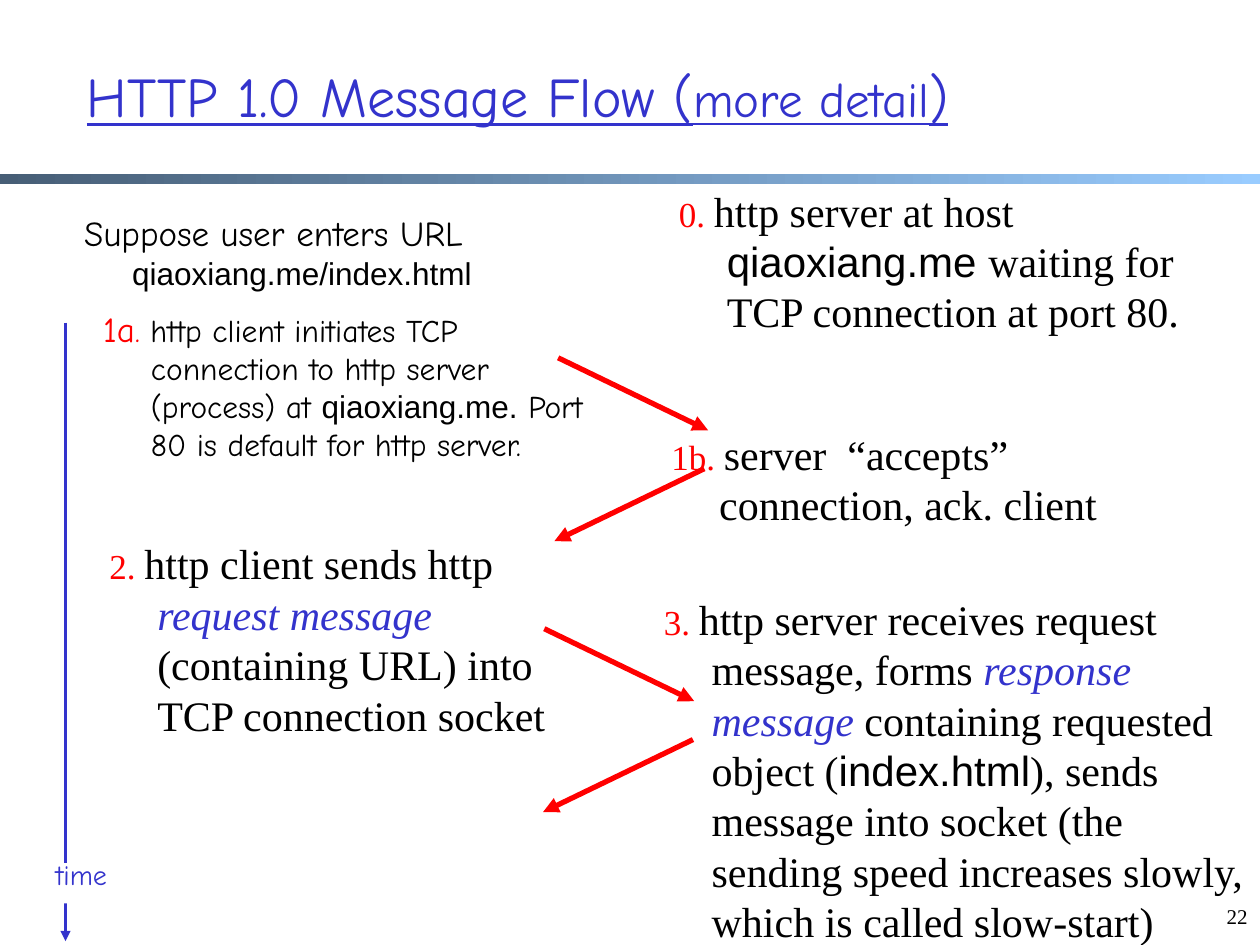
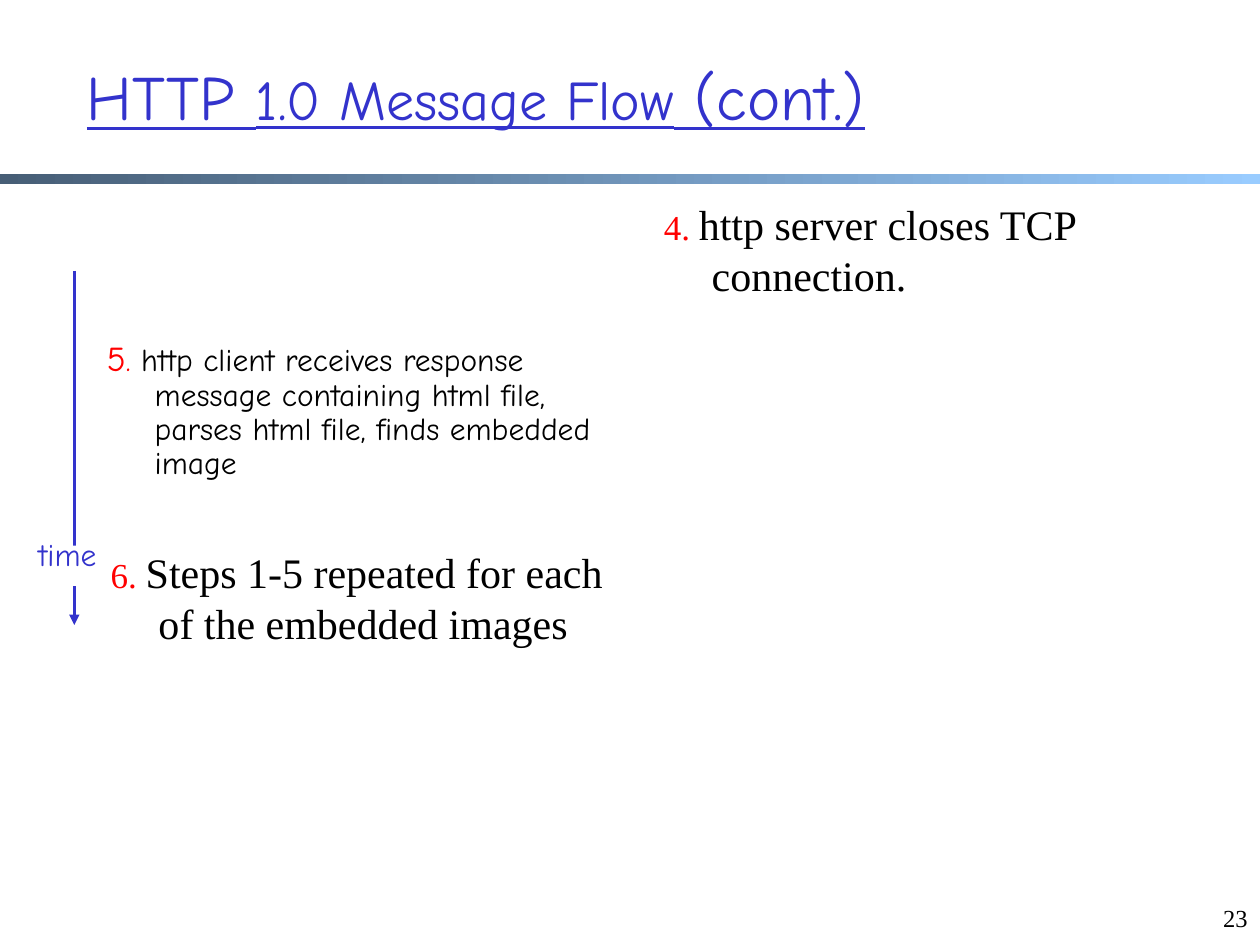
import pptx
import pptx.dml.color
import pptx.enum.dml
import pptx.enum.shapes
import pptx.enum.text
import pptx.oxml
import pptx.oxml.ns
import pptx.util

BLUE, RED, BLACK, WHITE = "3333CC", "FF0000", "000000", "FFFFFF"
BAND_FROM, BAND_TO = "475E76", "99CCFF"
COMIC, SERIF, SANS = "Comic Neue", "Times New Roman", "Arial"
COLS, ROWS = 100, 75
ALIGN = pptx.enum.text.PP_ALIGN
HANG = pptx.util.Inches(0.38)
STEP_WIDTH = 41.7


def rgb(value):
    return pptx.dml.color.RGBColor.from_string(value)


class Deck:
    """Holds the shared style and the current slide, on a grid of 100 columns by 75 rows."""

    def __init__(self):
        self.prs = pptx.Presentation()
        self.prs.slide_width = pptx.util.Inches(10)
        self.prs.slide_height = pptx.util.Inches(7.5)
        self.s = None

    def x(self, cols):
        return round(self.prs.slide_width * cols / COLS)

    def y(self, rows):
        return round(self.prs.slide_height * rows / ROWS)

    def box(self, left, top, width, height):
        return self.x(left), self.y(top), self.x(width), self.y(height)

    def new_slide(self, title, title_width, number, number_size):
        self.s = self.prs.slides.add_slide(self.prs.slide_layouts[5])
        self.band()
        self.text((95, 71.2, 5, 5), [(number, number_size, SERIF, BLACK)], ALIGN.RIGHT)
        sp = self.s.shapes.title
        sp.left, sp.top, sp.width, sp.height = self.box(5.9, 2.8, title_width, 9.5)
        tf = sp.text_frame
        tf.auto_size = pptx.enum.text.MSO_AUTO_SIZE.NONE
        tf.vertical_anchor = pptx.enum.text.MSO_ANCHOR.MIDDLE
        p = tf.paragraphs[0]
        p.alignment = ALIGN.LEFT
        for words, size in title:
            self.run(p, words, size, COMIC, BLUE).font.underline = True

    def rect(self, *place):
        sp = self.s.shapes.add_shape(pptx.enum.shapes.MSO_SHAPE.RECTANGLE, *self.box(*place))
        sp.shadow.inherit = False
        sp.line.fill.background()
        return sp

    def band(self):
        fill = self.rect(0, 13.8, COLS, 0.8).fill
        fill.gradient()
        fill.gradient_angle = 0
        for stop, color, position in zip(fill.gradient_stops, (BAND_FROM, BAND_TO), (0, 1)):
            stop.color.rgb = rgb(color)
            stop.position = position

    def run(self, p, words, size, font, color, italic=False):
        r = p.add_run()
        r.text = words
        r.font.size = pptx.util.Pt(size)
        r.font.name = font
        r.font.color.rgb = rgb(color)
        r.font.italic = italic
        return r

    def text(self, place, runs, align=ALIGN.LEFT, wrap=True):
        tf = self.s.shapes.add_textbox(*self.box(*place)).text_frame
        tf.word_wrap = wrap
        p = tf.paragraphs[0]
        p.alignment = align
        for r in runs:
            if r is None:
                p.add_line_break()
            else:
                self.run(p, *r)
        return p

    def hanging(self, left, top, width, height, runs):
        p = self.text((left, top, width, height), runs)
        p.space_before = pptx.util.Pt(4)
        pPr = p._p.get_or_add_pPr()
        pPr.set("marL", str(HANG))
        pPr.set("indent", str(-HANG))
        return p

    def step(self, left, top, height, number, *parts, width=STEP_WIDTH):
        runs = [(number + " ", 20, SERIF, RED)]
        runs += [(words, 24, *look) for words, *look in parts]
        return self.hanging(left, top, width, height, runs)

    def comic_step(self, left, top, height, number, *parts):
        runs = [(number, 20, COMIC, RED), (".", 18, COMIC, RED)]
        runs += [(words, 18, font, BLACK) for words, font in parts]
        return self.hanging(left, top, STEP_WIDTH, height, runs)

    def arrow(self, x1, y1, x2, y2, color, weight):
        c = self.s.shapes.add_connector(
            pptx.enum.shapes.MSO_CONNECTOR.STRAIGHT, self.x(x1), self.y(y1), self.x(x2), self.y(y2))
        c.line.color.rgb = rgb(color)
        c.line.width = pptx.util.Pt(weight)
        tail = pptx.oxml.parse_xml(f'<a:tailEnd {pptx.oxml.ns.nsdecls("a")} type="triangle"/>')
        c.line._get_or_add_ln().append(tail)
        c._element.spPr.append(pptx.oxml.parse_xml(f'<a:effectLst {pptx.oxml.ns.nsdecls("a")}/>'))

    def message(self, x, y, direction):
        self.arrow(x, y, x + 11.9 * direction, y + 5.75, RED, 3)

    def time_axis(self, x, top, bottom, gap, label, size):
        self.arrow(x, top, x, bottom, BLUE, 1.5)
        sp = self.rect(*gap)
        sp.fill.solid()
        sp.fill.fore_color.rgb = rgb(WHITE)
        self.text(label, [("time", size, COMIC, BLUE)], ALIGN.CENTER, wrap=False)


def message_flow(deck):
    deck.new_slide([("HTTP 1.0 Message Flow (", 32), ("more detail", 28), (")", 32)], 89.1, "22", 12)
    deck.time_axis(5.2, 25.6, 74.7, (2.6, 68.5, 7.2, 3.2), (3.1, 67.6, 6.7, 3.7), 16)
    deck.hanging(5.7, 16.3, 91.2, 5.1, [
        ("Suppose user enters URL ", 20, COMIC, BLACK), None,
        ("qiaoxiang.me/index.html", 18, SANS, BLACK)])
    deck.comic_step(
        7.2, 23.9, 20.8, "1a",
        (" http client initiates TCP connection to http server (process) at ", COMIC),
        ("qiaoxiang.me.", SANS), (" Port 80 is default for http server.", COMIC))
    deck.step(
        7.7, 42.2, 11.8, "2.", ("http client sends http ", SERIF, BLACK),
        ("request message", SERIF, BLUE, True),
        (" (containing URL) into TCP connection socket", SERIF, BLACK))
    deck.step(
        52.3, 33.5, 8.8, "1b.",
        ("server  “accepts” connection, ack. client", SERIF, BLACK))
    deck.step(
        51.7, 46.6, 25.8, "3.", ("http server receives request message, forms ", SERIF, BLACK),
        ("response message", SERIF, BLUE, True), (" containing requested object (", SERIF, BLACK),
        ("index.html", SANS, BLACK),
        ("), sends message into socket (the sending speed increases slowly, "
         "which is called slow-start)", SERIF, BLACK), width=48.3)
    deck.step(
        52.9, 14.2, 9.8, "0.", ("http server at host ", SERIF, BLACK),
        ("qiaoxiang.me ", SANS, BLACK), ("waiting for TCP connection at port 80.", SERIF, BLACK))
    for x, y, direction in ((44.3, 28.4, 1), (55.9, 37.2, -1), (43.2, 49.9, 1), (55, 58.7, -1)):
        deck.message(x, y, direction)


def message_flow_end(deck):
    deck.new_slide([("HTTP ", 36), ("1.0 Message Flow", 32), (" (cont.)", 36)], 85, "23", 14)
    p = deck.comic_step(
        7.5, 26.6, 16.8, "5",
        (" http client receives response message containing html file, "
         "parses html file, finds embedded image", COMIC))
    p.line_spacing = 0.9
    deck.step(7.8, 42.9, 7.3, "6.", ("Steps 1-5 repeated for each of the embedded images", SERIF, BLACK))
    deck.step(51.7, 15.3, 8, "4.", ("http server closes TCP connection.", SERIF, BLACK))
    deck.time_axis(5.9, 21.5, 49.6, (3.3, 43.3, 3.8, 3.2), (0.9, 42, 8.9, 5), 18)


def main():
    deck = Deck()
    message_flow(deck)
    message_flow_end(deck)
    deck.prs.save("out.pptx")


if __name__ == "__main__":
    main()
